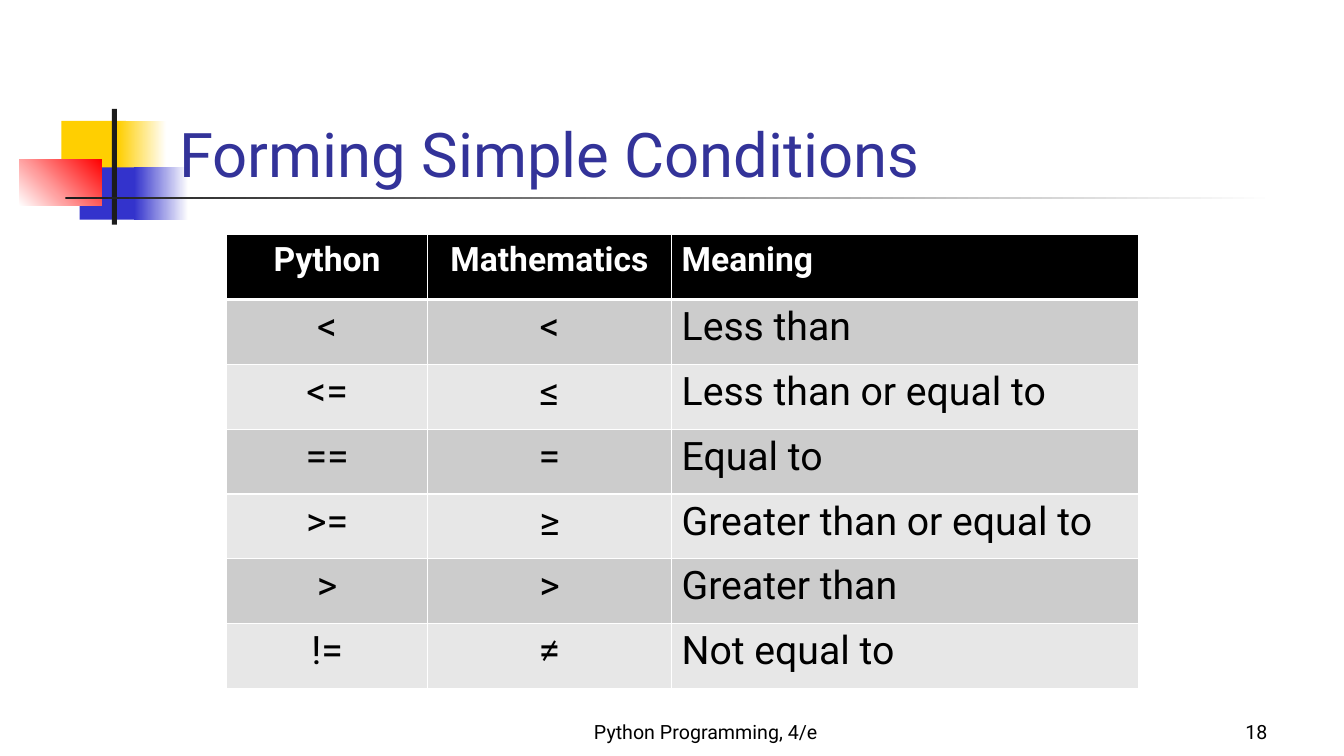
from dataclasses import dataclass

from lxml import etree
from pptx import Presentation
from pptx.dml.color import RGBColor
from pptx.enum.shapes import MSO_SHAPE
from pptx.enum.text import MSO_ANCHOR, MSO_AUTO_SIZE, PP_ALIGN
from pptx.oxml.ns import qn
from pptx.util import Inches, Pt

RECTANGLE = MSO_SHAPE.RECTANGLE
BOTTOM = MSO_ANCHOR.BOTTOM
NO_AUTOFIT = MSO_AUTO_SIZE.NONE
LEFT, CENTER, RIGHT = PP_ALIGN.LEFT, PP_ALIGN.CENTER, PP_ALIGN.RIGHT
TITLE_ONLY = 5


@dataclass(frozen=True)
class Theme:
    font: str = "Roboto"
    title: str = "333399"
    text: str = "000000"
    white: str = "FFFFFF"
    yellow: str = "FFCF01"
    blue: str = "3333CC"
    red: str = "FF0000"
    rule: str = "1C1C1C"
    header: str = "000000"
    bands: tuple = ("CCCCCC", "E7E7E7")
    title_size: int = 44
    header_size: int = 24
    body_size: int = 28
    footer_size: int = 14


THEME = Theme()
CONDITIONS = [
    ("Python", "Mathematics", "Meaning"),
    ("<", "<", "Less than"),
    ("<=", "≤", "Less than or equal to"),
    ("==", "=", "Equal to"),
    (">=", "≥", "Greater than or equal to"),
    (">", ">", "Greater than"),
    ("!=", "≠", "Not equal to"),
]
COLUMN_SHARES = (0.22, 0.268, 0.512)
COLUMN_ALIGNMENTS = (CENTER, CENTER, LEFT)


def inches(*lengths):
    return [Inches(length) for length in lengths]


def format_paragraph(paragraph, size, color, alignment, bold=False):
    paragraph.alignment = alignment
    font = paragraph.font
    font.name, font.size, font.bold = THEME.font, Pt(size), bold
    font.color.rgb = RGBColor.from_string(color)


def add_block(slide, box, colors, angle=0):
    """Add a rectangle: one colour is solid, two make a gradient."""
    shape = slide.shapes.add_shape(RECTANGLE, *inches(*box))
    shape.shadow.inherit = False
    shape.line.fill.background()
    if len(colors) == 1:
        shape.fill.solid()
        shape.fill.fore_color.rgb = RGBColor.from_string(colors[0])
        return
    shape.fill.gradient()
    shape.fill.gradient_angle = angle
    for stop, color in zip(shape.fill.gradient_stops, colors):
        stop.color.rgb = RGBColor.from_string(color)


def add_emblem(slide, left, top):
    """Draw the coloured blocks and the crossed rules from their top left corner."""
    blocks = [
        ((0.42, 0.12, 0.64, 0.52), (THEME.yellow,), 0),
        ((0.98, 0.12, 0.48, 0.52), (THEME.yellow, THEME.white), 0),
        ((0.6, 0.58, 0.62, 0.52), (THEME.blue,), 0),
        ((1.14, 0.58, 0.54, 0.52), (THEME.blue, THEME.white), 0),
        ((0, 0.5, 0.82, 0.46), (THEME.white, THEME.red), 45),
        ((0.92, 0, 0.05, 1.15), (THEME.rule,), 0),
        ((0.46, 0.87, 12, 0.03), (THEME.rule, THEME.white), 0),
    ]
    for (x, y, width, height), colors, angle in blocks:
        add_block(slide, (left + x, top + y, width, height), colors, angle)


def set_title(slide, text, box):
    title = slide.shapes.title
    title.left, title.top, title.width, title.height = inches(*box)
    frame = title.text_frame
    frame.text = text
    frame.auto_size = NO_AUTOFIT
    frame.vertical_anchor = BOTTOM
    format_paragraph(frame.paragraphs[0], THEME.title_size, THEME.title, LEFT)
    slide.shapes._spTree.append(title._element)  # in front of the emblem


def add_footer(slide, text, box, alignment):
    frame = slide.shapes.add_textbox(*inches(*box)).text_frame
    frame.word_wrap = True
    frame.vertical_anchor = BOTTOM
    frame.text = text
    format_paragraph(frame.paragraphs[0], THEME.footer_size, THEME.text, alignment)


def set_borders(cell, top, bottom):
    """Draw white borders; must run before the fill is set."""
    properties = cell._tc.get_or_add_tcPr()
    for side, width in (("L", 1), ("R", 1), ("T", top), ("B", bottom)):
        line = etree.SubElement(properties, qn(f"a:ln{side}"), w=str(Pt(width)))
        fill = etree.SubElement(line, qn("a:solidFill"))
        etree.SubElement(fill, qn("a:srgbClr"), val=THEME.white)


def set_relative_space_before(paragraph, percent):
    """Set spacing as a share of the line; must run before the font is set."""
    spacing = etree.SubElement(paragraph._p.get_or_add_pPr(), qn("a:spcBef"))
    etree.SubElement(spacing, qn("a:spcPct"), val=str(percent * 1000))


def add_condition_table(slide, box):
    width, height = box[2:]
    table = slide.shapes.add_table(
        len(CONDITIONS), len(COLUMN_SHARES), *inches(*box)).table
    for column, share in zip(table.columns, COLUMN_SHARES):
        column.width = Inches(width * share)
    for row_index, texts in enumerate(CONDITIONS):
        table.rows[row_index].height = Inches(height / len(CONDITIONS))
        is_header = row_index == 0
        background = THEME.header if is_header else THEME.bands[(row_index - 1) % 2]
        size = THEME.header_size if is_header else THEME.body_size
        color = THEME.white if is_header else THEME.text
        for column_index, text in enumerate(texts):
            cell = table.cell(row_index, column_index)
            set_borders(cell, 3 if row_index == 1 else 1, 3 if is_header else 1)
            cell.fill.solid()
            cell.fill.fore_color.rgb = RGBColor.from_string(background)
            cell.text = text
            paragraph = cell.text_frame.paragraphs[0]
            set_relative_space_before(paragraph, 20)
            format_paragraph(
                paragraph, size, color, COLUMN_ALIGNMENTS[column_index], is_header)


def main():
    presentation = Presentation()
    presentation.slide_width, presentation.slide_height = inches(13.33, 7.5)
    slide = presentation.slides.add_slide(presentation.slide_layouts[TITLE_ONLY])
    add_emblem(slide, 0.19, 1.08)
    add_footer(slide, "Python Programming, 4/e", (4.89, 6.92, 4.22, 0.5), CENTER)
    add_footer(slide, "18", (9.89, 6.92, 2.78, 0.5), RIGHT)
    set_title(slide, "Forming Simple Conditions", (1.68, 0.68, 11.36, 1.25))
    add_condition_table(slide, (2.25, 2.33, 9.04, 4.5))
    presentation.save("out.pptx")


if __name__ == "__main__":
    main()
